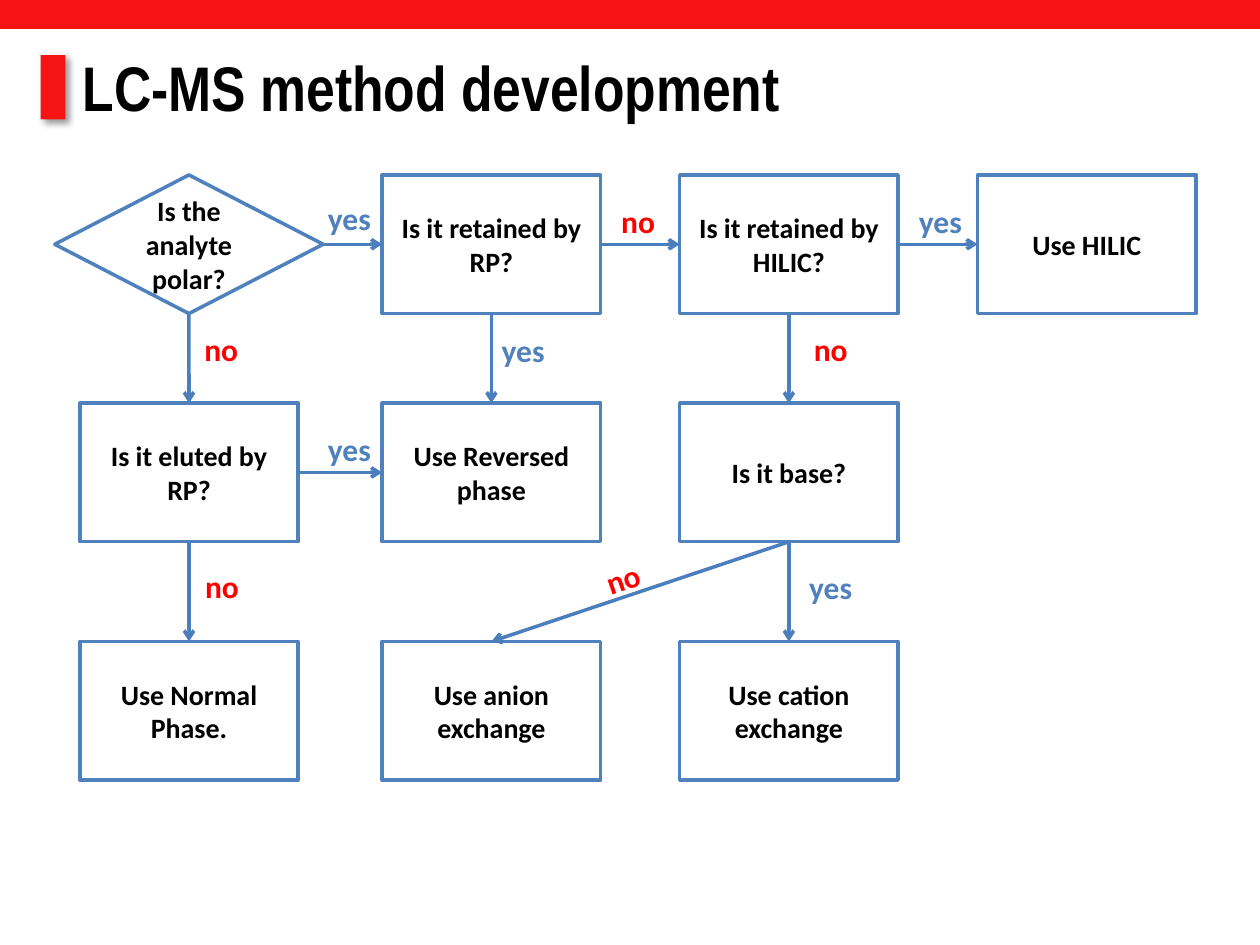
"""Build the LC-MS method development decision flowchart slide."""
from typing import NamedTuple

from lxml import etree
from pptx import Presentation
from pptx import util as u
from pptx.dml.color import RGBColor
from pptx.enum import shapes, text
from pptx.oxml import ns

RED = RGBColor(0xF5, 0x13, 0x13)
NO_RED = RGBColor(0xFF, 0x00, 0x00)
BLUE = RGBColor(0x4F, 0x81, 0xBD)
ARROW_BLUE = RGBColor(0x4B, 0x7E, 0xBC)
WHITE = RGBColor(0xFF, 0xFF, 0xFF)
BLACK = RGBColor(0x00, 0x00, 0x00)

COLUMNS = (108, 280.8, 450.8, 621)
ROWS = (100, 230.4, 366.6)
BOX_W, DIAMOND_W, BOX_H = 124.8, 153.4, 79.2
LABEL_W, LABEL_H = 48, 29
TOP, LEFT, BOTTOM, RIGHT = range(4)
RECT = shapes.MSO_SHAPE.RECTANGLE


class Node(NamedTuple):
    key: str
    words: str
    col: int
    row: int


class Arrow(NamedTuple):
    start: str
    begin_site: int
    end: str
    end_site: int


class Label(NamedTuple):
    words: str
    left: float
    top: float
    rotation: float = 0


NODES = (
    Node("polar", "Is the analyte polar?", 0, 0),
    Node("retained_rp", "Is it retained by RP?", 1, 0),
    Node("retained_hilic", "Is it retained by HILIC?", 2, 0),
    Node("hilic", "Use HILIC", 3, 0),
    Node("eluted_rp", "Is it eluted by RP?", 0, 1),
    Node("reversed", "Use Reversed phase", 1, 1),
    Node("base", "Is it base?", 2, 1),
    Node("normal", "Use Normal Phase.", 0, 2),
    Node("anion", "Use anion exchange", 1, 2),
    Node("cation", "Use cation exchange", 2, 2),
)
ARROWS = (
    Arrow("polar", RIGHT, "retained_rp", LEFT),
    Arrow("retained_rp", RIGHT, "retained_hilic", LEFT),
    Arrow("retained_hilic", RIGHT, "hilic", LEFT),
    Arrow("eluted_rp", RIGHT, "reversed", LEFT),
    Arrow("polar", BOTTOM, "eluted_rp", TOP),
    Arrow("retained_rp", BOTTOM, "reversed", TOP),
    Arrow("retained_hilic", BOTTOM, "base", TOP),
    Arrow("eluted_rp", BOTTOM, "normal", TOP),
    Arrow("base", BOTTOM, "anion", TOP),
    Arrow("base", BOTTOM, "cation", TOP),
)
LABELS = (
    Label("yes", 175.7, 110.2),
    Label("no", 340.6, 111.6),
    Label("yes", 513.4, 111.6),
    Label("no", 102.4, 185),
    Label("yes", 275, 185.8),
    Label("no", 450.7, 185),
    Label("yes", 175.7, 241.9),
    Label("no", 102.8, 320.4),
    Label("no", 331.9, 316.1, 341),
    Label("yes", 450.7, 321.1),
)


def write(sp, words: str, size: float, color: RGBColor, font: str = "Calibri",
          align=text.PP_ALIGN.CENTER) -> None:
    """Put one bold paragraph in a shape."""
    tf = sp.text_frame
    tf.word_wrap = True
    tf.text = words
    p = tf.paragraphs[0]
    p.alignment = align
    f = p.runs[0].font
    f.name, f.size, f.bold = font, u.Pt(size), True
    f.color.rgb = color


def add_block(s, left: float, top: float, width: float, height: float,
              fill: RGBColor, kind=RECT):
    """Add a flat filled shape without outline."""
    sp = s.shapes.add_shape(kind, u.Pt(left), u.Pt(top), u.Pt(width), u.Pt(height))
    sp.shadow.inherit = False
    sp.fill.solid()
    sp.fill.fore_color.rgb = fill
    sp.line.fill.background()
    return sp


def add_shadow(sp) -> None:
    """Give a shape a soft shadow to the lower right."""
    effects = sp._element.spPr.find(ns.qn("a:effectLst"))
    shadow = etree.SubElement(effects, ns.qn("a:outerShdw"), blurRad=str(u.Pt(4)),
                              dist=str(u.Pt(3)), dir="2700000", algn="tl", rotWithShape="0")
    color = etree.SubElement(shadow, ns.qn("a:srgbClr"), val=str(BLACK))
    etree.SubElement(color, ns.qn("a:alpha"), val="40000")


def add_node(s, node: Node):
    """Add a step centred on its grid column."""
    is_start = node.key == "polar"
    width = DIAMOND_W if is_start else BOX_W
    kind = shapes.MSO_SHAPE.DIAMOND if is_start else RECT
    sp = add_block(s, COLUMNS[node.col] - width / 2, ROWS[node.row], width, BOX_H, WHITE, kind)
    sp.line.color.rgb = BLUE
    sp.line.width = u.Pt(2)
    write(sp, node.words, 16, BLACK)
    tf = sp.text_frame
    tf.vertical_anchor = text.MSO_ANCHOR.MIDDLE
    if is_start:
        tf.margin_left = tf.margin_right = u.Pt(2.88)
    return sp


def add_arrow(s, arrow: Arrow, boxes: dict) -> None:
    """Join two steps with an open arrow."""
    line = s.shapes.add_connector(shapes.MSO_CONNECTOR.STRAIGHT, 0, 0, 0, 0)
    line.begin_connect(boxes[arrow.start], arrow.begin_site)
    line.end_connect(boxes[arrow.end], arrow.end_site)
    line.line.color.rgb = ARROW_BLUE
    line.line.width = u.Pt(2)
    etree.SubElement(line.line._get_or_add_ln(), ns.qn("a:tailEnd"), type="arrow")
    etree.SubElement(line._element.spPr, ns.qn("a:effectLst"))


def add_label(s, label: Label) -> None:
    """Add a yes or no answer beside an arrow."""
    sp = s.shapes.add_textbox(u.Pt(label.left), u.Pt(label.top), u.Pt(LABEL_W), u.Pt(LABEL_H))
    sp.rotation = label.rotation
    write(sp, label.words, 18, BLUE if label.words == "yes" else NO_RED)


def main() -> None:
    """Draw the slide and save it."""
    prs = Presentation()
    prs.slide_width, prs.slide_height = u.Pt(720), u.Pt(540)
    s = prs.slides.add_slide(prs.slide_layouts[6])

    add_shadow(add_block(s, 23.2, 31.5, 14.2, 36.8, RED))
    add_block(s, 0, 0, 720, 16.6, RED)
    title = s.shapes.add_textbox(u.Pt(40.3), u.Pt(23.8), u.Pt(655.2), u.Pt(51))
    write(title, "LC-MS method development", 36, BLACK, "Arial Narrow", text.PP_ALIGN.LEFT)
    title.text_frame.vertical_anchor = text.MSO_ANCHOR.MIDDLE

    boxes = {node.key: add_node(s, node) for node in NODES}
    for arrow in ARROWS:
        add_arrow(s, arrow, boxes)
    for label in LABELS:
        add_label(s, label)
    prs.save("out.pptx")


if __name__ == "__main__":
    main()
